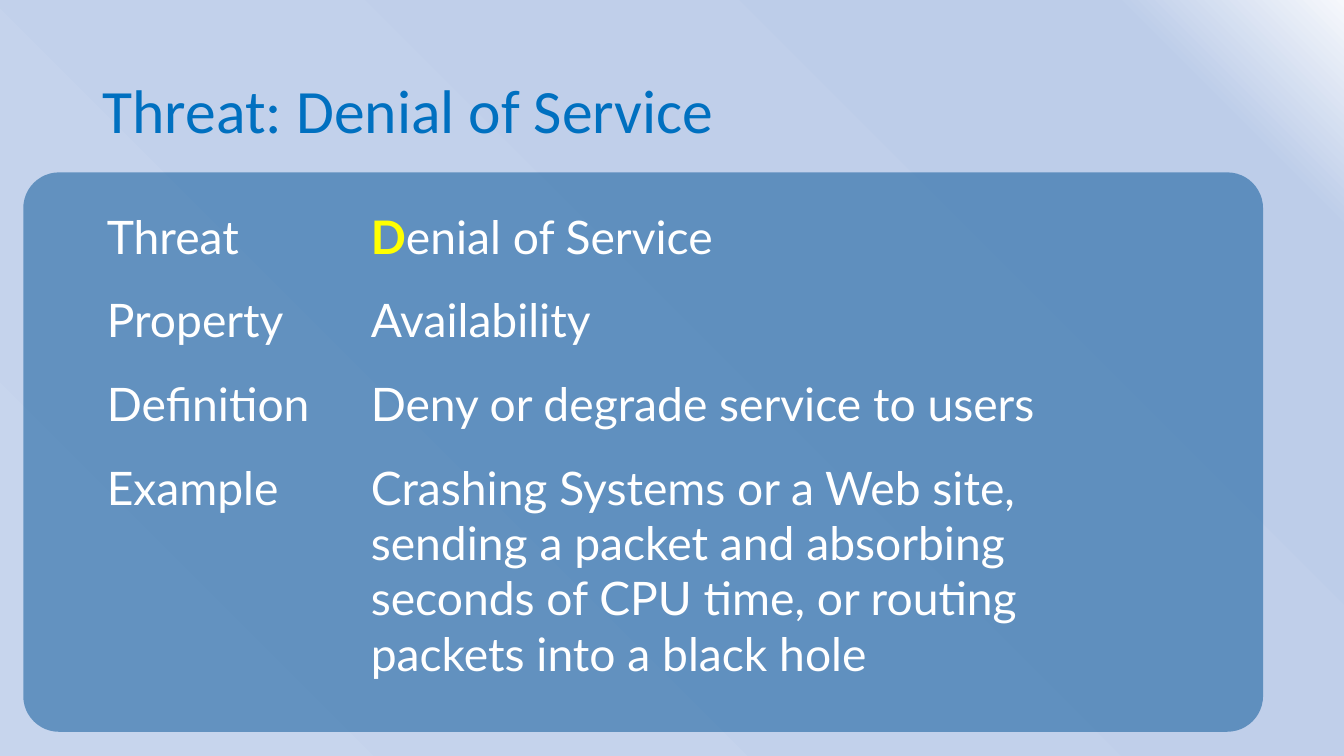
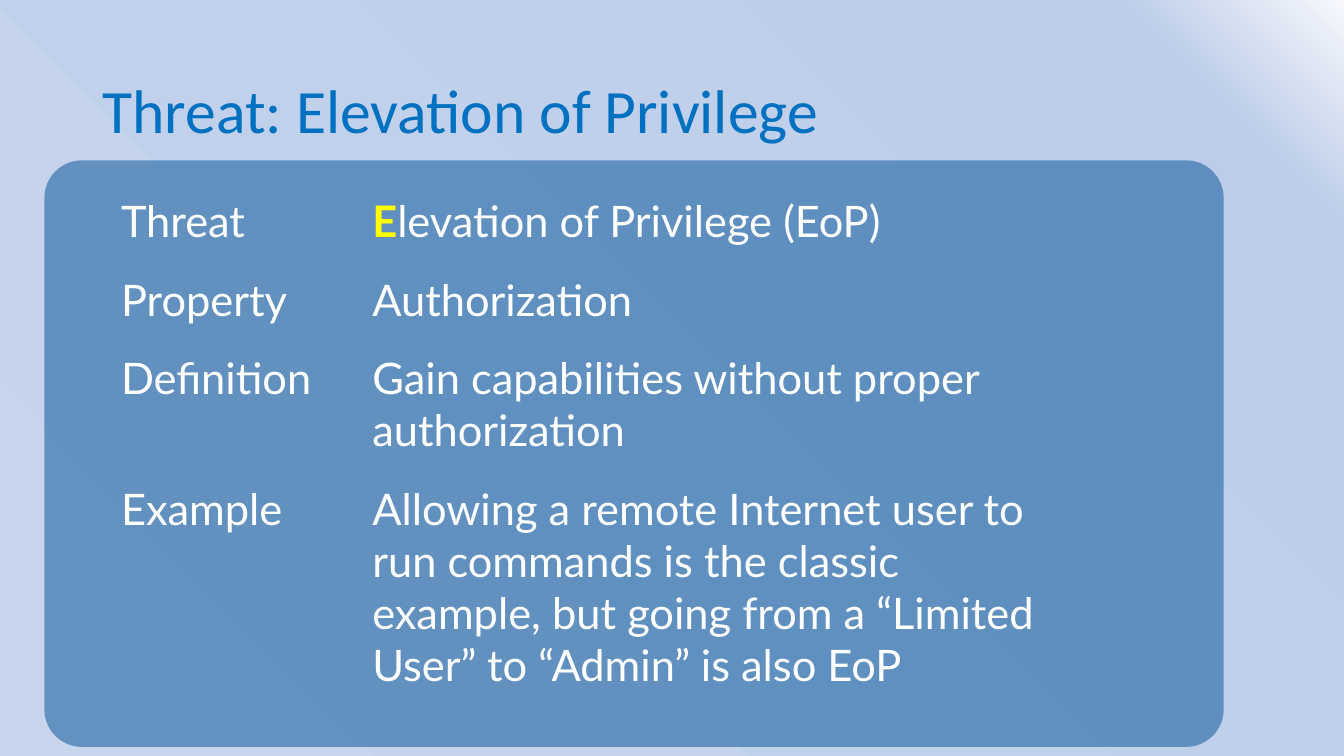
from dataclasses import dataclass

from lxml import etree
from pptx import Presentation
from pptx.dml.color import RGBColor
from pptx.enum.shapes import MSO_SHAPE
from pptx.enum.text import MSO_ANCHOR
from pptx.oxml.ns import qn
from pptx.util import Inches, Pt

ROUND = MSO_SHAPE.ROUNDED_RECTANGLE
MIDDLE = MSO_ANCHOR.MIDDLE
WIDE, HIGH = Inches(13.333), Inches(7.5)
PLAIN = "{2D5ABB26-0587-4C30-8999-92F81FD0307C}"  # no style, no grid


@dataclass(frozen=True)
class Theme:
    head: str = "0070C0"
    panel: str = "005194"
    text: str = "FFFFFF"
    mark: str = "FFFF00"
    sky: tuple = ((0, "F6F8FC"), (11, "BDCDE9"), (100, "C7D5ED"))
    alpha: int = 50
    round: float = 0.064
    head_font: str = "Calibri"
    body_font: str = "Lato"
    head_size: int = 44
    label: float = 0.256  # share of the table width


THEME = Theme()
HEAD_BOX = (6.9, 5.33, 86.25, 19.33)
LABELS = ("Threat", "Property", "Definition", "Example")

# Boxes are percentages of the slide; rows are relative heights.
THREATS = (
    {
        "title": "Threat: Denial of Service",
        "panel": (1.73, 22.8, 92.25, 74),
        "table": (6.9, 25.73, 76.73, 65.87),
        "rows": (1, 1, 1, 3),
        "size": 33,
        "inset": 0.14,
        "facts": (
            "Denial of Service",
            "Availability",
            "Deny or degrade service to users",
            "Crashing Systems or a Web site, sending a packet and absorbing "
            "seconds of CPU time, or routing packets into a black hole",
        ),
    },
    {
        "title": "Threat: Elevation of Privilege",
        "panel": (3.3, 21.2, 87.75, 77.6),
        "table": (8.03, 24, 73.05, 69.33),
        "rows": (3, 3, 5, 9),
        "size": 31,
        "inset": 0.13,
        "facts": (
            "Elevation of Privilege (EoP)",
            "Authorization",
            "Gain capabilities without proper authorization",
            "Allowing a remote Internet user to run commands is the classic "
            "example, but going from a “Limited User” to “Admin” is also EoP",
        ),
    },
)


def place(box):
    """Turn percentages of the slide into left, top, width and height."""
    return [int(side * part / 100) for side, part in zip((WIDE, HIGH) * 2, box)]


def apply(item, values):
    for name, value in values.items():
        setattr(item, name, value)


def add_run(para, text, color, **font):
    run = para.add_run()
    run.text = text
    apply(run.font, font)
    run.font.color.rgb = RGBColor.from_string(color)


def paint_back(master):
    """Give every slide the diagonal gradient."""
    fill = master.background.fill
    fill.gradient()
    fill.gradient_angle = 225
    stops = master.element.find(".//" + qn("p:bg") + "//" + qn("a:gsLst"))
    for stop in list(stops):
        stops.remove(stop)
    for spot, color in THEME.sky:
        stop = etree.SubElement(stops, qn("a:gs"), pos=str(spot * 1000))
        etree.SubElement(stop, qn("a:srgbClr"), val=color)


def add_panel(slide, box):
    panel = slide.shapes.add_shape(ROUND, *place(box))
    panel.adjustments[0] = THEME.round
    panel.shadow.inherit = False
    panel.line.fill.background()
    panel.fill.solid()
    panel.fill.fore_color.rgb = RGBColor.from_string(THEME.panel)
    color = panel.element.spPr.find(qn("a:solidFill"))[0]
    etree.SubElement(color, qn("a:alpha"), val=str(THEME.alpha * 1000))


def add_title(slide, text):
    frame = slide.shapes.add_textbox(*place(HEAD_BOX)).text_frame
    apply(frame, {"word_wrap": True, "vertical_anchor": MIDDLE})
    para = frame.paragraphs[0]
    para.line_spacing = 0.9
    add_run(para, text, THEME.head, name=THEME.head_font, size=Pt(THEME.head_size))


def fill_cell(cell, parts, size, inset):
    """Write (text, color, bold) parts into a clear cell."""
    cell.fill.background()
    sides = ("left", "right", "top", "bottom")
    apply(cell, {f"margin_{side}": Inches(inset) for side in sides})
    para = cell.text_frame.paragraphs[0]
    for text, color, bold in parts:
        add_run(para, text, color, name=THEME.body_font, size=Pt(size), bold=bold)


def add_facts(slide, threat):
    left, top, width, height = place(threat["table"])
    rows = threat["rows"]
    table_frame = slide.shapes.add_table(len(rows), 2, left, top, width, height)
    table = table_frame.table
    apply(table, {"first_row": False, "horz_banding": False})
    table_frame.element.find(".//" + qn("a:tableStyleId")).text = PLAIN
    for col, share in zip(table.columns, (THEME.label, 1 - THEME.label)):
        col.width = int(width * share)
    for row, share in zip(table.rows, rows):
        row.height = int(height * share / sum(rows))
    for index, (label, fact) in enumerate(zip(LABELS, threat["facts"])):
        parts = [(fact, THEME.text, False)]
        if index == 0:
            parts = [(fact[0], THEME.mark, True), (fact[1:], THEME.text, False)]
        for col, content in enumerate(([(label, THEME.text, False)], parts)):
            fill_cell(table.cell(index, col), content, threat["size"], threat["inset"])


def main():
    prs = Presentation()
    apply(prs, {"slide_width": WIDE, "slide_height": HIGH})
    paint_back(prs.slide_master)
    for threat in THREATS:
        slide = prs.slides.add_slide(prs.slide_layouts[6])
        add_panel(slide, threat["panel"])
        add_title(slide, threat["title"])
        add_facts(slide, threat)
    prs.save("out.pptx")


if __name__ == "__main__":
    main()
